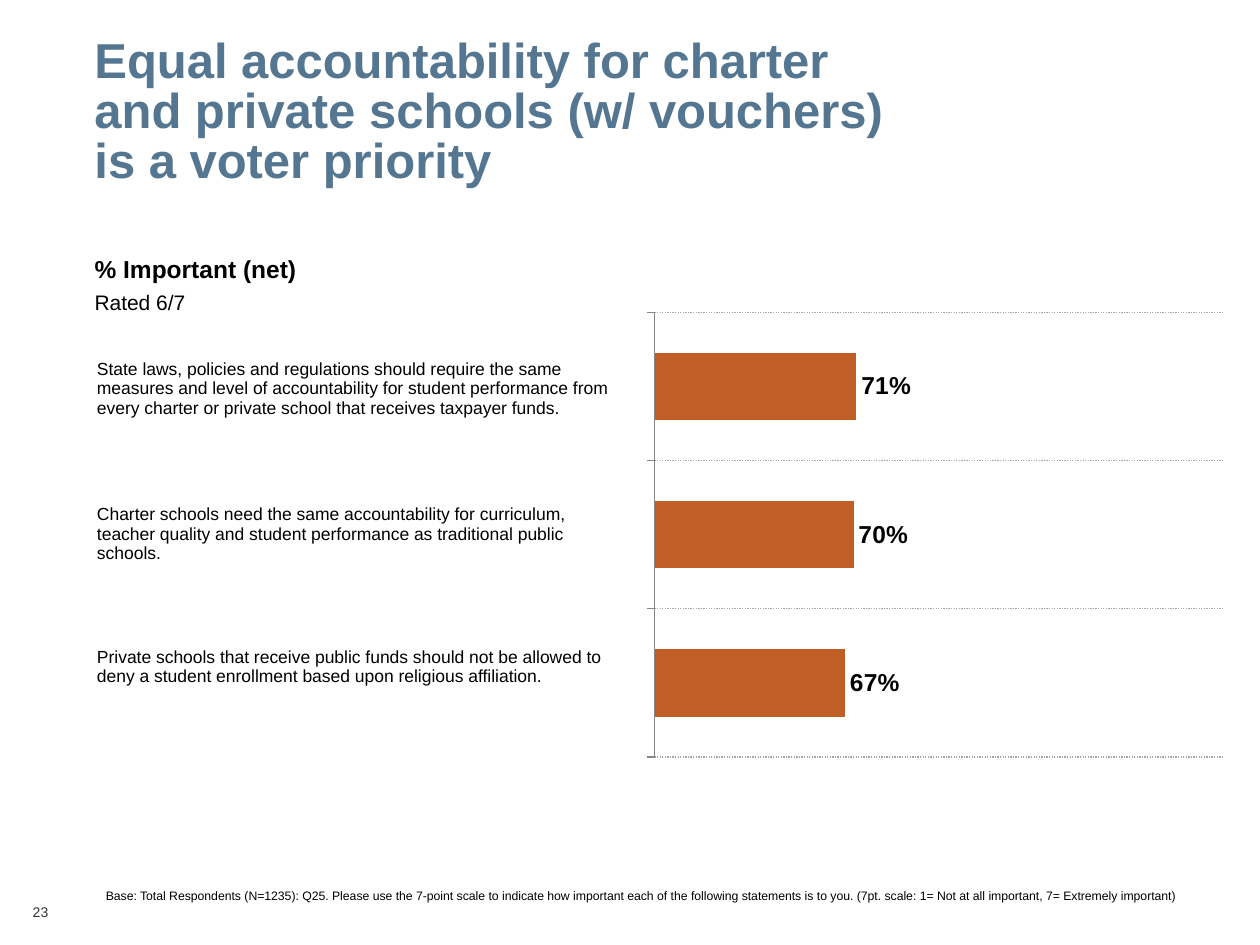
from typing import NamedTuple

from lxml import etree
from pptx import Presentation
from pptx.chart.data import CategoryChartData
from pptx.dml.color import RGBColor
from pptx.enum.chart import XL_CHART_TYPE, XL_LABEL_POSITION, XL_TICK_LABEL_POSITION, XL_TICK_MARK
from pptx.enum.dml import MSO_LINE
from pptx.enum.text import MSO_ANCHOR
from pptx.oxml.ns import qn
from pptx.util import Inches, Pt

BAR = XL_CHART_TYPE.BAR_CLUSTERED
OUTSIDE_END = XL_LABEL_POSITION.OUTSIDE_END
NO_LABELS = XL_TICK_LABEL_POSITION.NONE
TICK_OUT, TICK_NONE = XL_TICK_MARK.OUTSIDE, XL_TICK_MARK.NONE
DOTTED = MSO_LINE.ROUND_DOT
MIDDLE, TOP = MSO_ANCHOR.MIDDLE, MSO_ANCHOR.TOP

FONT = "Arial"
BLACK, GREY, BLUE, ORANGE = "000000", "333333", "547690", "C05E28"


class Statement(NamedTuple):
    text: str
    share: float
    height: float


STATEMENTS = [
    Statement("State laws, policies and regulations should require the same measures and level of "
              "accountability for student performance from every charter or private school that "
              "receives taxpayer funds.", 0.71, 1.13),
    Statement("Charter schools need the same accountability for curriculum, teacher quality and "
              "student performance as traditional public schools.", 0.70, 1.18),
    Statement("Private schools that receive public funds should not be allowed to deny a student "
              "enrollment based upon religious affiliation.", 0.67, 0.93),
]


def rgb(value: str) -> RGBColor:
    return RGBColor.from_string(value)


def style_font(font, size: float, color: str = BLACK, bold: bool = False, name: str = FONT):
    font.name, font.size, font.bold = name, Pt(size), bold
    font.color.rgb = rgb(color)


def write(p, text: str, *, size: float, color: str = BLACK, bold: bool = False, spacing=None):
    """Fill a paragraph; a newline in the text becomes a line break."""
    p.text = text
    if spacing is not None:
        p.line_spacing = spacing
    for r in p.runs:
        style_font(r.font, size, color, bold)


def add_box(slide, left: float, top: float, width: float, height: float,
            anchor=TOP, wrap: bool = True):
    sp = slide.shapes.add_textbox(Inches(left), Inches(top), Inches(width), Inches(height))
    tf = sp.text_frame
    tf.word_wrap, tf.vertical_anchor = wrap, anchor
    tf.margin_left = tf.margin_top = tf.margin_right = tf.margin_bottom = 0
    return tf


def set_plot_layout(chart, **fractions: float):
    """Place the inner plot area by fractions of the chart frame."""
    plot_area = chart._chartSpace.chart.plotArea
    for old in plot_area.findall(qn("c:layout")):
        plot_area.remove(old)
    layout = etree.Element(qn("c:layout"))
    manual = etree.SubElement(layout, qn("c:manualLayout"))
    settings = {"layoutTarget": "inner", "xMode": "edge", "yMode": "edge", **fractions}
    for tag, value in settings.items():
        etree.SubElement(manual, qn(f"c:{tag}")).set("val", str(value))
    plot_area.insert(0, layout)


def add_importance_chart(slide):
    data = CategoryChartData(number_format="0%")
    data.categories = [str(i) for i in range(1, len(STATEMENTS) + 1)]
    data.add_series("Series 1", [s.share for s in STATEMENTS])
    chart = slide.shapes.add_chart(BAR, Inches(4.95), Inches(2.06), Inches(4.9), Inches(4.11),
                                   data).chart
    chart.has_legend = chart.has_title = False
    style_font(chart.font, 9, name="League Spartan")
    set_plot_layout(chart, x=0.05, y=0.102, w=0.921, h=0.859)

    axis = chart.category_axis
    axis.reverse_order = True
    axis.tick_label_position = NO_LABELS
    axis.major_tick_mark, axis.minor_tick_mark = TICK_OUT, TICK_NONE
    axis.format.line.color.rgb = rgb("868686")
    axis.has_major_gridlines = True
    grid = axis.major_gridlines.format.line
    grid.color.rgb, grid.width, grid.dash_style = rgb("A6A6A6"), Pt(0.75), DOTTED

    values = chart.value_axis
    values.minimum_scale, values.maximum_scale, values.major_unit = 0, 2, 0.2
    values.has_major_gridlines = values.visible = False

    plot = chart.plots[0]
    plot.gap_width, plot.vary_by_categories = 120, False
    series = plot.series[0]
    series.format.fill.solid()
    series.format.fill.fore_color.rgb = rgb(ORANGE)
    labels = series.data_labels
    labels.show_value, labels.position = True, OUTSIDE_END
    labels.number_format, labels.number_format_is_linked = "0%", False
    style_font(labels.font, 14, bold=True)


def add_statement_table(slide):
    height = sum(s.height for s in STATEMENTS)
    table = slide.shapes.add_table(len(STATEMENTS), 1, Inches(0.76), Inches(2.52),
                                   Inches(4.19), Inches(height)).table
    table.first_row = table.horz_banding = False
    for row, statement in zip(table.rows, STATEMENTS):
        row.height = Inches(statement.height)
        cell = row.cells[0]
        cell.fill.background()
        cell.vertical_anchor = MIDDLE
        cell.margin_left = cell.margin_right = Inches(0.01)
        cell.margin_top = cell.margin_bottom = 0
        write(cell.text_frame.paragraphs[0], statement.text, size=10)


def main():
    prs = Presentation()
    prs.slide_width, prs.slide_height = Inches(10), Inches(7.5)
    slide = prs.slides.add_slide(prs.slide_layouts[6])

    page = add_box(slide, 0.26, 7.17, 1.75, 0.13)
    write(page.paragraphs[0], "23", size=8, color=GREY)

    add_importance_chart(slide)
    add_statement_table(slide)

    title = add_box(slide, 0.75, 0, 6.5, 1.8, anchor=MIDDLE)
    write(title.paragraphs[0],
          "Equal accountability for charter and private schools (w/ vouchers) \nis a voter priority",
          size=28, color=BLUE, bold=True, spacing=0.85)

    base = add_box(slide, 0.84, 7.05, 8.75, 0.12)
    write(base.paragraphs[0],
          "Base: Total Respondents (N=1235): Q25. Please use the 7-point scale to indicate how "
          "important each of the following statements is to you. (7pt. scale: 1= Not at all "
          "important, 7= Extremely important)", size=7)

    heading = add_box(slide, 0.75, 2, 1.61, 0.49, wrap=False)
    write(heading.paragraphs[0], "% Important (net)", size=14, bold=True, spacing=Pt(17.8))
    write(heading.add_paragraph(), "Rated 6/7", size=12, spacing=Pt(17.8))

    prs.save("out.pptx")


if __name__ == "__main__":
    main()
